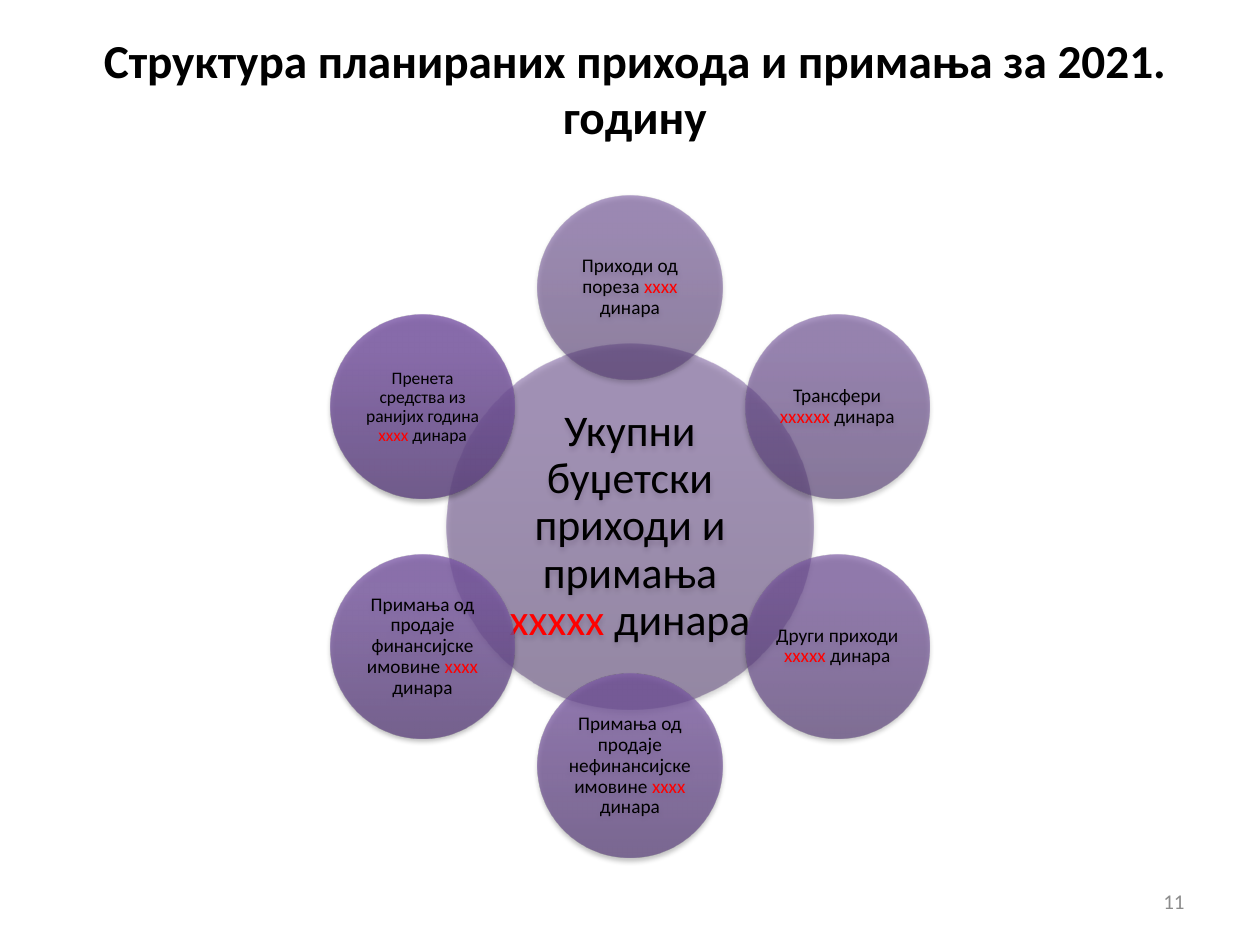
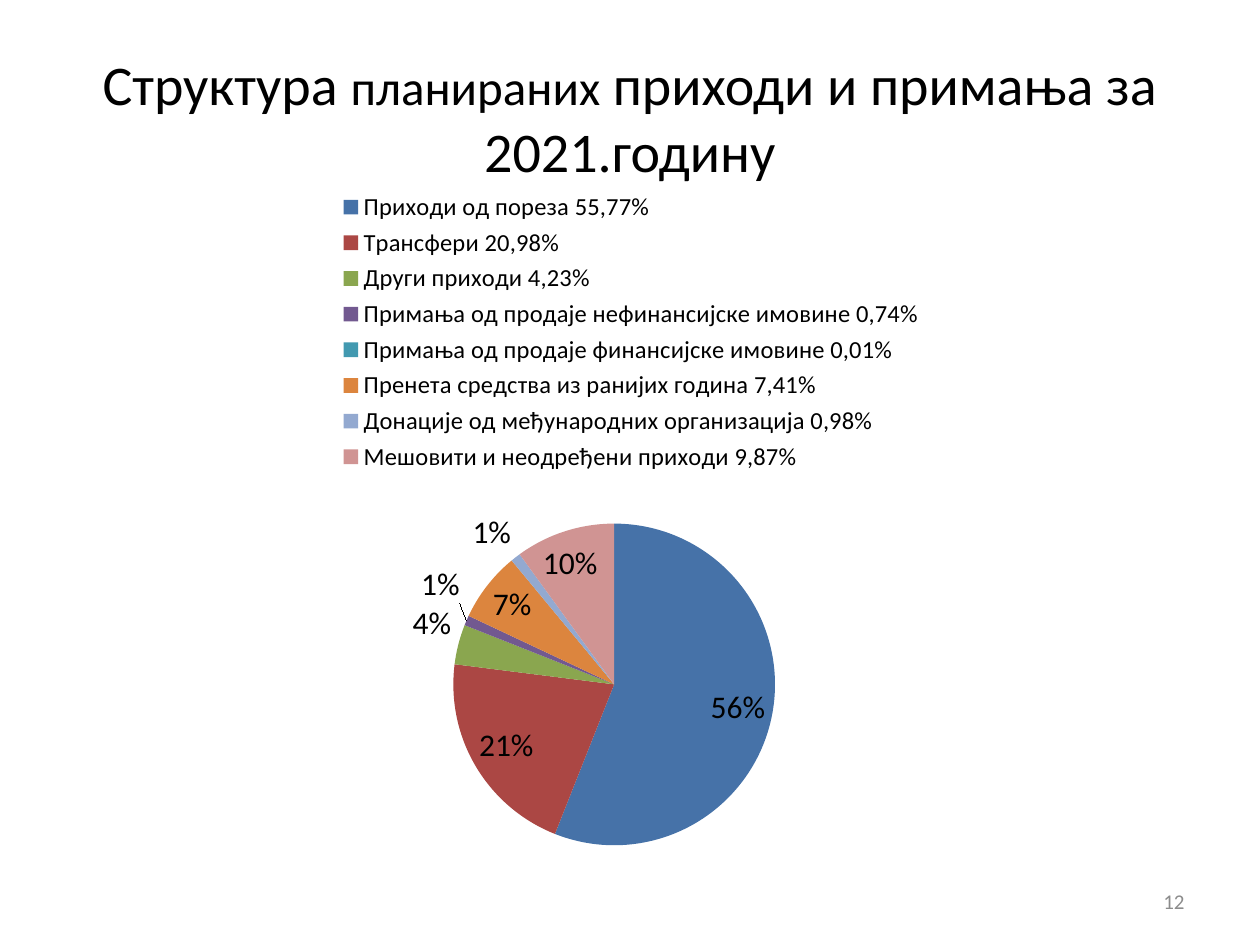
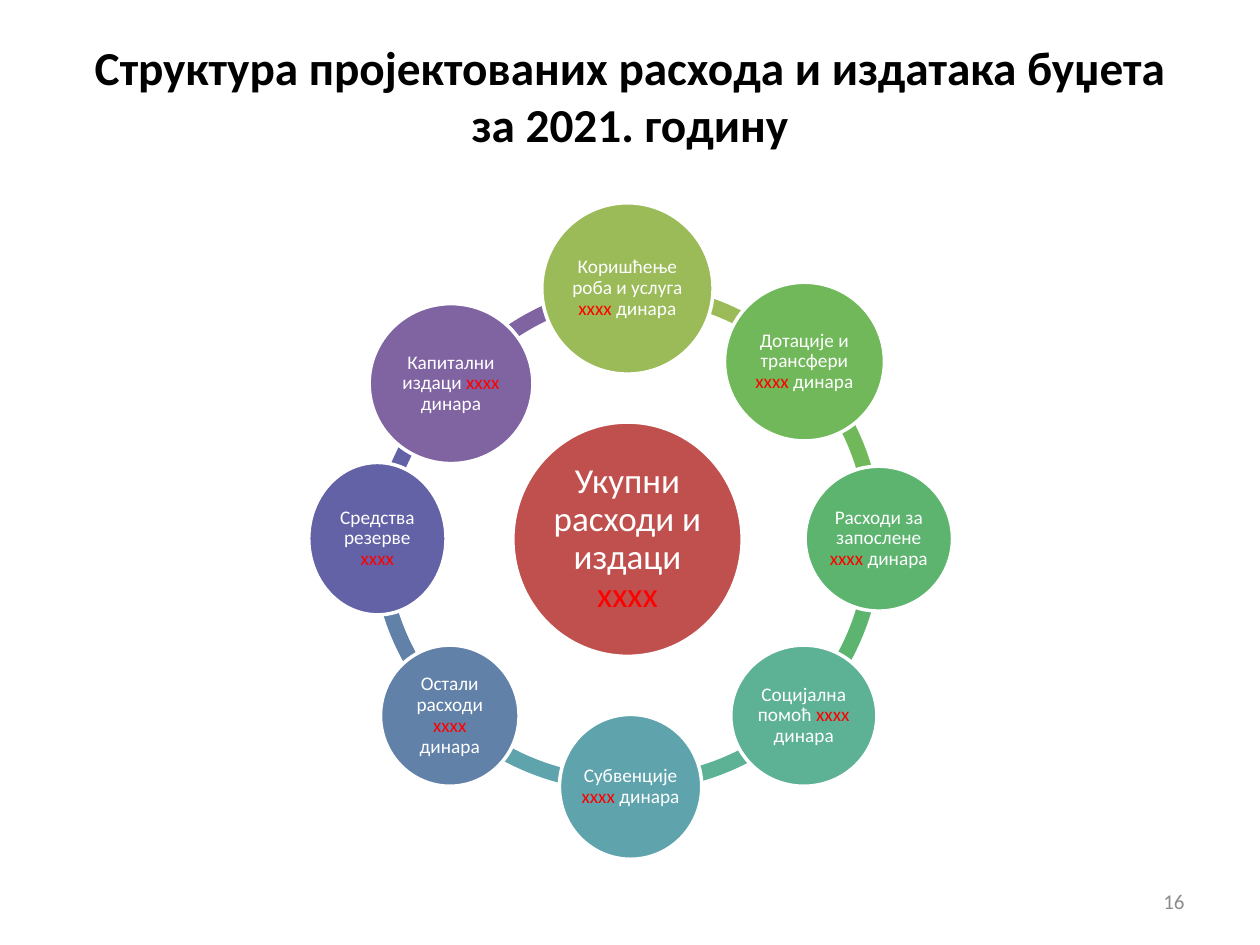
from math import cos, radians, sin

from pptx import Presentation
from pptx.chart.data import CategoryChartData as PieData
from pptx.dml.color import RGBColor as RGB
from pptx.enum.chart import XL_CHART_TYPE as Kind
from pptx.enum.chart import XL_LABEL_POSITION as Spot
from pptx.enum.chart import XL_LEGEND_POSITION as Side
from pptx.enum.shapes import MSO_SHAPE as Form
from pptx.enum.text import MSO_ANCHOR as Anchor
from pptx.enum.text import MSO_AUTO_SIZE as Fit
from pptx.enum.text import PP_ALIGN as Align
from pptx.oxml import parse_xml
from pptx.oxml.ns import nsdecls
from pptx.util import Inches, Pt

FONT = "Calibri"
BLACK = RGB(0x00, 0x00, 0x00)
WHITE = RGB(0xFF, 0xFF, 0xFF)
RED = RGB(0xFF, 0x00, 0x00)
GRAY = RGB(0x8C, 0x8C, 0x8C)
BRICK = RGB(0xC0, 0x50, 0x4D)
OLIVE = RGB(0x9B, 0xBB, 0x59)
LEAF = RGB(0x70, 0xB8, 0x5A)
GREEN = RGB(0x5C, 0xB4, 0x6F)
MINT = RGB(0x5D, 0xB1, 0x95)
TEAL = RGB(0x5F, 0xA4, 0xAD)
STEEL = RGB(0x61, 0x81, 0xA9)
INDIGO = RGB(0x63, 0x62, 0xA6)
PURPLE = RGB(0x80, 0x64, 0xA2)

SHADES = [
    (0, RGB(0x56, 0x3D, 0x74), RGB(0x5F, 0x45, 0x80)),
    (80, RGB(0x70, 0x50, 0x97), RGB(0x7C, 0x59, 0xA6)),
    (100, RGB(0x70, 0x4F, 0x99), RGB(0x7C, 0x58, 0xA8)),
]

INCOME = [
    ("Приходи од пореза |xxxx| динара", 11),
    ("Трансфери |xxxxxx| динара", 11),
    ("Други приходи |xxxxx| динара", 11),
    ("Примања од продаје нефинансијске имовине |xxxx| динара", 11),
    ("Примања од продаје финансијске имовине |xxxx| динара", 11),
    ("Пренета средства из ранијих година |xxxx| динара", 10),
]

SHARES = [
    ("Приходи од пореза 55,77%", 56, RGB(0x46, 0x72, 0xA8)),
    ("Трансфери 20,98%", 21, RGB(0xAB, 0x47, 0x44)),
    ("Други приходи 4,23%", 4, RGB(0x8A, 0xA6, 0x4F)),
    ("Примања од продаје нефинансијске имовине 0,74%", 1, RGB(0x72, 0x59, 0x90)),
    ("Примања од продаје финансијске имовине 0,01%", 0, RGB(0x42, 0x99, 0xB0)),
    ("Пренета средства из ранијих година 7,41%", 7, RGB(0xDC, 0x85, 0x3E)),
    ("Донације од међународних организација 0,98%", 1, RGB(0x93, 0xA9, 0xD0)),
    ("Мешовити и неодређени приходи 9,87%", 10, RGB(0xD0, 0x94, 0x93)),
]

ARCS = [
    (3.13, 2.24, 217.83, 264.88, PURPLE),
    (2.94, 2.45, 185.81, 225.94, INDIGO),
    (2.95, 2.25, 135, 180, STEEL),
    (2.93, 2.23, 88.5, 134.1, TEAL),
    (2.98, 2.23, 45.93, 89.8, MINT),
    (2.95, 2.25, 0, 45, GREEN),
    (2.95, 2.25, 315, 0, LEAF),
    (2.95, 2.25, 270, 315, OLIVE),
]

COSTS = [
    ("Укупни расходи и издаци |xxxx", 20, BRICK, (4.07, 3.35, 1.82, 1.86)),
    ("Коришћење роба и услуга |xxxx| динара", 11, OLIVE, (4.3, 1.61, 1.36, 1.36)),
    ("Дотације и трансфери |xxxx| динара", 11, LEAF, (5.75, 2.24, 1.27, 1.26)),
    ("Расходи за запослене |xxxx| динара", 11, GREEN, (6.39, 3.7, 1.17, 1.15)),
    ("Социјална помоћ |xxxx| динара", 11, MINT, (5.8, 5.12, 1.16, 1.12)),
    ("Субвенције |xxxx| динара", 11, TEAL, (4.44, 5.67, 1.13, 1.15)),
    ("Остали расходи |xxxx| динара", 11, STEEL, (3.02, 5.12, 1.1, 1.12)),
    ("Средства резерве |xxxx", 11, INDIGO, (2.45, 3.67, 1.09, 1.21)),
    ("Капитални издаци |xxxx| динара", 11, PURPLE, (2.93, 2.41, 1.3, 1.27)),
]


def style(run, size, color, bold=False):
    font = run.font
    font.name, font.size, font.bold = FONT, Pt(size), bold
    font.color.rgb = color


def place(shape, box):
    shape.left, shape.top, shape.width, shape.height = map(Inches, box)


def add_page(deck, box, parts, number, bold):
    slide = deck.slides.add_slide(deck.slide_layouts[5])
    title = slide.shapes.title
    place(title, box)
    frame = title.text_frame
    frame.auto_size = Fit.NONE
    frame.word_wrap = True
    frame.vertical_anchor = Anchor.MIDDLE
    line = frame.paragraphs[0]
    line.alignment = Align.CENTER
    for text, size in parts:
        run = line.add_run()
        run.text = text
        style(run, size, BLACK, bold)
    add_number(slide, number)
    return slide


def add_number(slide, number):
    box = slide.shapes.add_textbox(*map(Inches, (7.17, 6.95, 2.33, 0.4)))
    frame = box.text_frame
    frame.word_wrap = True
    frame.vertical_anchor = Anchor.MIDDLE
    frame.text = str(number)
    line = frame.paragraphs[0]
    line.alignment = Align.RIGHT
    style(line.runs[0], 12, GRAY)


def add_disc(slide, box, text, size, color):
    disc = slide.shapes.add_shape(Form.OVAL, *map(Inches, box))
    frame = disc.text_frame
    frame.word_wrap = True
    frame.vertical_anchor = Anchor.MIDDLE
    frame.margin_left = frame.margin_right = Inches(0.01)
    frame.margin_top = frame.margin_bottom = Inches(0.01)
    line = frame.paragraphs[0]
    line.alignment = Align.CENTER
    line.line_spacing = 0.9
    for i, part in enumerate(text.split("|")):
        run = line.add_run()
        run.text = part
        style(run, size, RED if i % 2 else color)
    return disc


def blend(first, last, share):
    return RGB(*(round(a + (b - a) * share) for a, b in zip(first, last)))


def add_glass(slide, x, y, width, text, size, step):
    box = (x - width / 2, y - width / 2, width, width)
    disc = add_disc(slide, box, text, size, BLACK)
    alpha = (50 + 5 * step) * 1000
    stops = "".join(
        f'<a:gs pos="{pos * 1000}"><a:srgbClr val="{blend(first, last, step / 6)}">'
        f'<a:alpha val="{alpha}"/></a:srgbClr></a:gs>'
        for pos, first, last in SHADES
    )
    props = disc.element.spPr
    props.insert(2, parse_xml(
        f'<a:gradFill {nsdecls("a")} rotWithShape="1"><a:gsLst>{stops}</a:gsLst>'
        '<a:lin ang="16200000" scaled="0"/></a:gradFill>'))
    disc.line.fill.background()
    props.append(parse_xml(
        f'<a:effectLst {nsdecls("a")}><a:outerShdw blurRad="{Pt(3.1)}" '
        f'dist="{Pt(1.8)}" dir="5400000" rotWithShape="0"><a:srgbClr val="{BLACK}">'
        '<a:alpha val="35000"/></a:srgbClr></a:outerShdw></a:effectLst>'))


def add_solid(slide, text, size, color, box):
    disc = add_disc(slide, box, text, size, WHITE)
    disc.shadow.inherit = False
    disc.fill.solid()
    disc.fill.fore_color.rgb = color
    disc.line.color.rgb = WHITE
    disc.line.width = Pt(2)


def add_arc(slide, left, top, start, end, color):
    arc = slide.shapes.add_shape(
        Form.BLOCK_ARC, *map(Inches, (left, top, 4.05, 4.05)))
    arc.adjustments[0] = start * 0.6
    arc.adjustments[1] = end * 0.6
    arc.adjustments[2] = 0.03
    arc.shadow.inherit = False
    arc.fill.solid()
    arc.fill.fore_color.rgb = color
    arc.line.fill.background()


def set_layout(part, index, box, inner=False):
    for old in part.xpath("c:layout"):
        part.remove(old)
    target = '<c:layoutTarget val="inner"/>' if inner else ""
    modes = "".join(f'<c:{key}Mode val="edge"/>' for key in "xy")
    sizes = "".join(f'<c:{key} val="{val}"/>' for key, val in zip("xywh", box))
    part.insert(index, parse_xml(
        f'<c:layout {nsdecls("c")}><c:manualLayout>{target}{modes}{sizes}'
        '</c:manualLayout></c:layout>'))


def add_pie(slide, box):
    data = PieData()
    data.categories = [name for name, _, _ in SHARES]
    data.add_series("Series 1", [value for _, value, _ in SHARES])
    chart = slide.shapes.add_chart(Kind.PIE, *map(Inches, box), data).chart
    chart.has_title = False
    chart.font.name, chart.font.size = FONT, Pt(18)
    chart.font.color.rgb = BLACK
    chart.has_legend = True
    legend = chart.legend
    legend.position = Side.TOP
    legend.include_in_layout = False
    legend.font.name, legend.font.size = FONT, Pt(14)
    legend.font.color.rgb = BLACK
    plot = chart.plots[0]
    plot.vary_by_categories = True
    plot.has_data_labels = True
    labels = plot.data_labels
    labels.show_percentage = True
    labels.show_value = False
    labels.number_format = "0%"
    labels.number_format_is_linked = False
    labels.position = Spot.BEST_FIT
    for i, (_, _, color) in enumerate(SHARES):
        fill = plot.series[0].points[i].format.fill
        fill.solid()
        fill.fore_color.rgb = color
    set_layout(chart.element.xpath(".//c:plotArea")[0], 0,
               (0.01, 0.45, 0.97, 0.42), True)
    set_layout(chart.element.xpath(".//c:legend")[0], 1,
               (0.24, 0.01, 0.54, 0.38))


def main():
    deck = Presentation()
    deck.slide_width, deck.slide_height = Inches(10), Inches(7.5)

    slide = add_page(
        deck, (0.54, 0.27, 9, 0.85),
        [("Структура планираних прихода и примања за 2021. годину", 27)], 11, True)
    x, y, radius = 5, 4.18, 1.9
    add_glass(slide, x, y, 2.91,
              "Укупни буџетски приходи и примања |xxxxx| динара", 25, 0)
    for i, (text, size) in enumerate(INCOME):
        angle = radians(60 * i - 90)
        add_glass(slide, x + radius * cos(angle), y + radius * sin(angle),
                  1.46, text, size, i + 1)

    slide = add_page(
        deck, (0.5, 0.3, 9, 1.25),
        [("Структура ", 32), ("планираних", 28),
         (" приходи и примања за 2021.годину", 32)], 12, False)
    add_pie(slide, (0.42, 1.42, 9, 6.08))

    slide = add_page(
        deck, (0.5, 0.29, 9, 0.93),
        [("Структура пројектованих расхода и издатака буџета за 2021. годину", 27)],
        16, True)
    for arc in ARCS:
        add_arc(slide, *arc)
    for cost in COSTS:
        add_solid(slide, *cost)

    deck.save("out.pptx")


if __name__ == "__main__":
    main()
